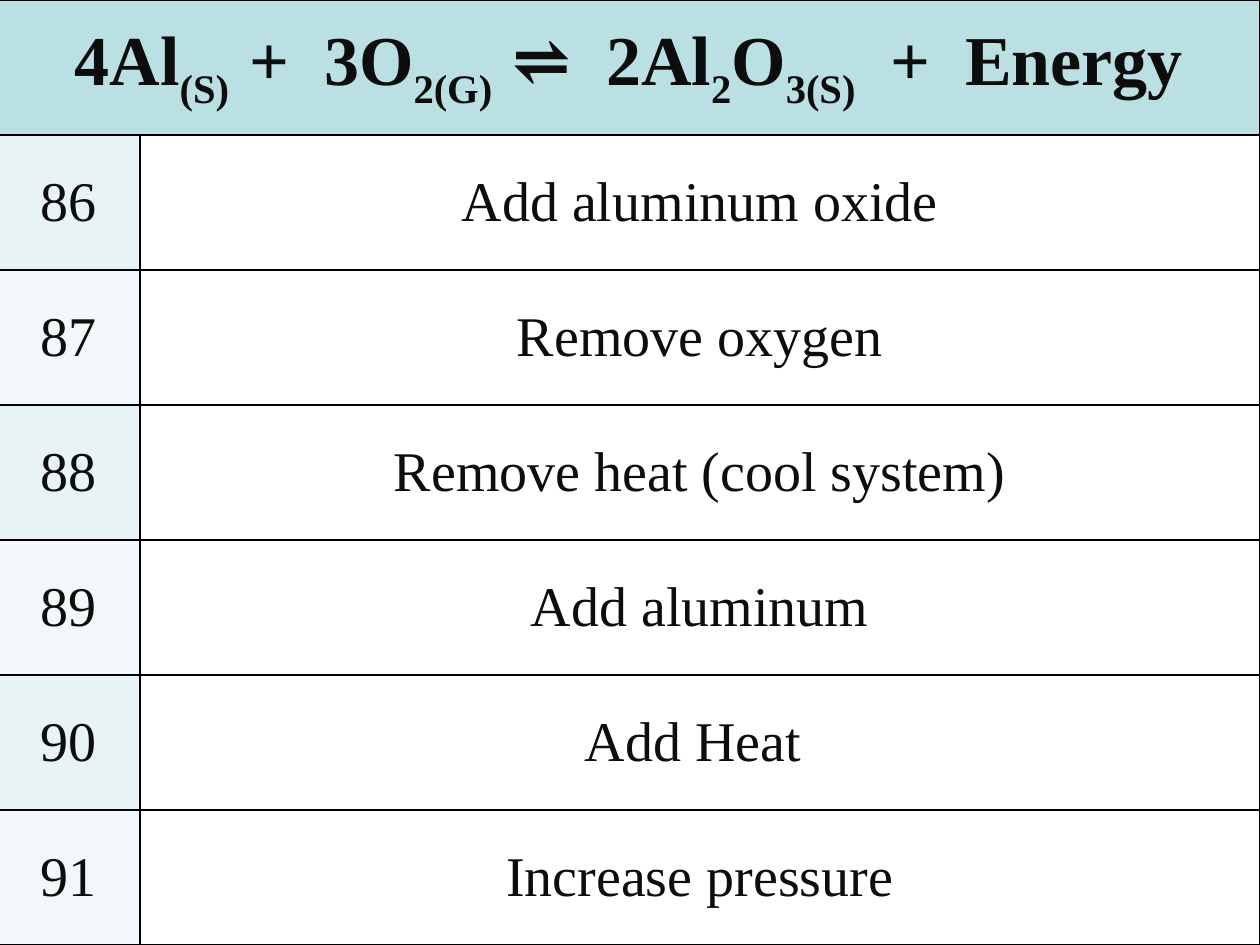
from lxml import etree
from pptx import Presentation
from pptx.dml.color import RGBColor
from pptx.enum.text import MSO_ANCHOR, PP_ALIGN
from pptx.oxml.ns import qn
from pptx.util import Cm, Pt

INK = RGBColor(0x0D, 0x0D, 0x0D)
BORDER = RGBColor(0x00, 0x00, 0x00)
HEADER = RGBColor(0xBB, 0xE0, 0xE3)
BAND_DARK = RGBColor(0xE7, 0xF3, 0xF4)
BAND_LIGHT = RGBColor(0xF3, 0xF9, 0xFA)
WHITE = RGBColor(0xFF, 0xFF, 0xFF)

FIRST_NUMBER = 86
CHANGES = ["Add aluminum oxide", "Remove oxygen", "Remove heat (cool system)",
           "Add aluminum", "Add Heat ", "Increase pressure"]
# Normal and subscript parts alternate
EQUATION = ["4Al", "(S)  ", "+  3O", "2(G)  ", "⇌  2Al", "2", "O", "3(S)", "  +  Energy"]


def style_cell(cell, fill):
    """Draw the four borders, then fill the cell and centre its text."""
    properties = cell._tc.get_or_add_tcPr()
    for side in ("lnL", "lnR", "lnT", "lnB"):
        line = etree.SubElement(properties, qn(f"a:{side}"), w=str(Pt(1)))
        solid = etree.SubElement(line, qn("a:solidFill"))
        etree.SubElement(solid, qn("a:srgbClr"), val=str(BORDER))
    cell.fill.solid()
    cell.fill.fore_color.rgb = fill
    cell.vertical_anchor = MSO_ANCHOR.MIDDLE
    cell.text_frame.paragraphs[0].alignment = PP_ALIGN.CENTER


def add_run(cell, text, size, bold=False):
    run = cell.text_frame.paragraphs[0].add_run()
    run.text = text
    run.font.name = "Times New Roman"
    run.font.size = Pt(size)
    run.font.bold = bold
    run.font.color.rgb = INK
    return run


presentation = Presentation()
presentation.slide_width = Cm(25.4)
presentation.slide_height = Cm(19.05)
slide = presentation.slides.add_slide(presentation.slide_layouts[6])

row_count = len(CHANGES) + 1
table = slide.shapes.add_table(row_count, 2, Cm(-0.05), Cm(0), Cm(25.45), Cm(19.05)).table
table.columns[0].width = Cm(2.87)
table.columns[1].width = Cm(22.58)

header = table.cell(0, 0)
header.merge(table.cell(0, 1))
for cell in table.rows[0].cells:
    style_cell(cell, HEADER)
for index, part in enumerate(EQUATION):
    run = add_run(header, part, 40, bold=True)
    if index % 2:
        run.font._element.set("baseline", "-25000")

for row, change in enumerate(CHANGES, start=1):
    number_cell, change_cell = table.rows[row].cells
    style_cell(number_cell, BAND_DARK if row % 2 else BAND_LIGHT)
    style_cell(change_cell, WHITE)
    add_run(number_cell, str(FIRST_NUMBER + row - 1), 32)
    add_run(change_cell, change, 32)

presentation.save("out.pptx")
